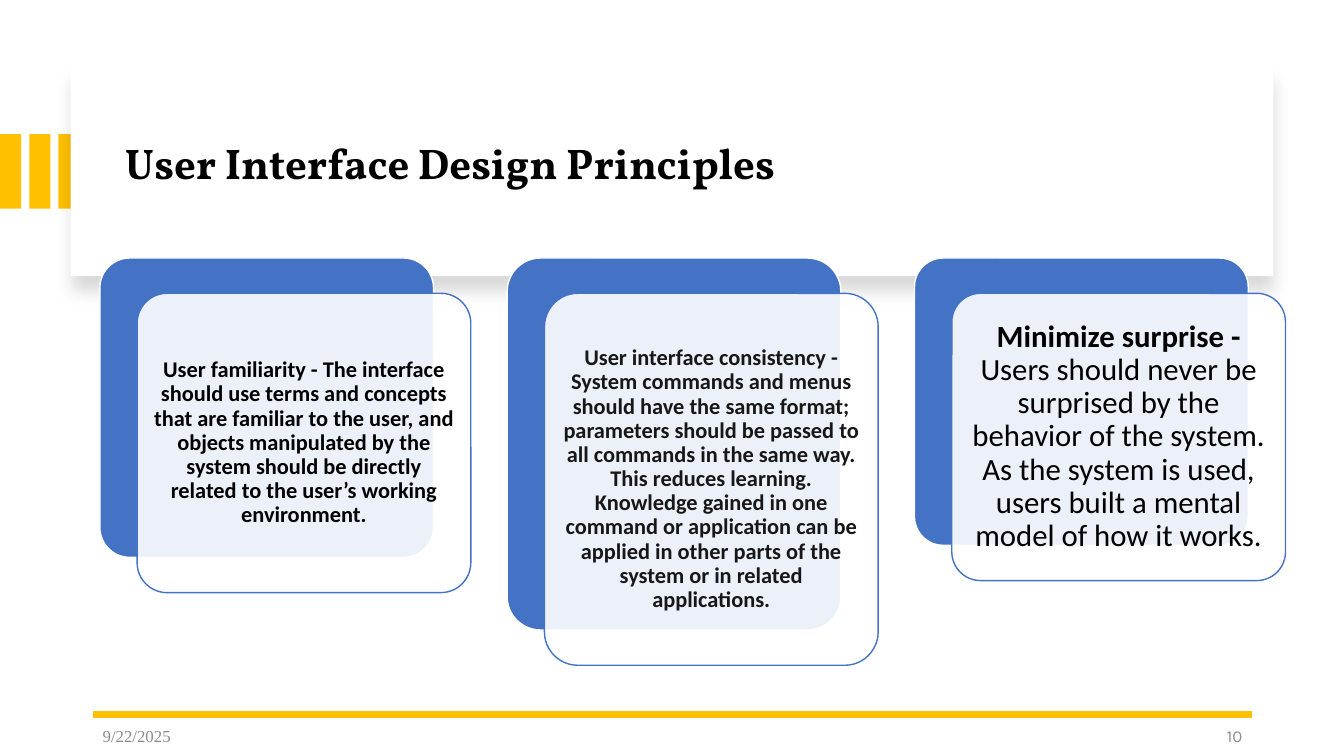
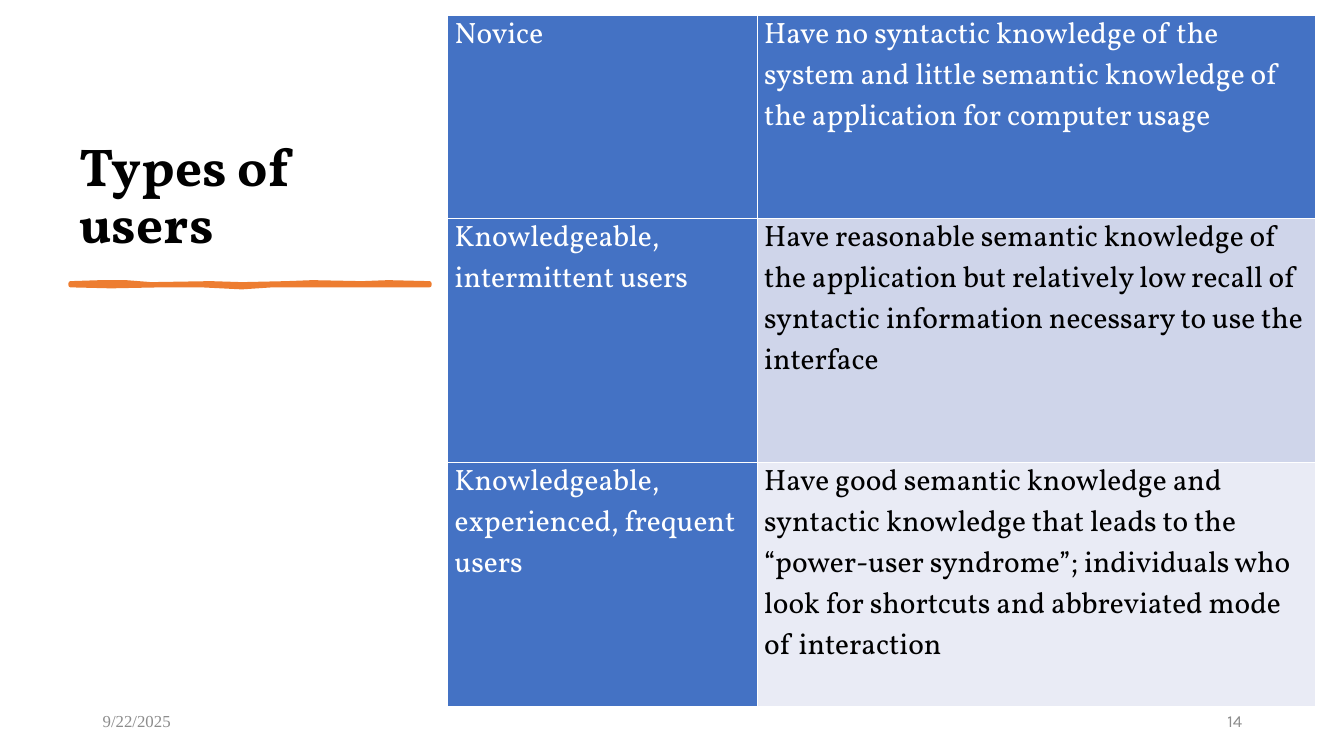
from dataclasses import dataclass

from lxml import etree
from pptx import Presentation
from pptx.dml.color import RGBColor
from pptx.enum.shapes import MSO_CONNECTOR as Connector, MSO_SHAPE as Shape
from pptx.enum.text import MSO_ANCHOR as Anchor, PP_ALIGN as Align
from pptx.oxml import parse_xml
from pptx.oxml.ns import nsdecls, qn
from pptx.util import Inches, Pt


@dataclass(frozen=True)
class Theme:
    black: str = "000000"
    white: str = "FFFFFF"
    soft_black: str = "181717"
    gray: str = "8C8C8C"
    gold: str = "FFC000"
    blue: str = "4472C4"
    orange: str = "ED7D31"
    band_dark: str = "CFD5EA"
    band_light: str = "E9EBF5"
    serif: str = "Vollkorn"
    sans: str = "Calibri"
    date_font: str = "Times New Roman"
    number_font: str = "Karla"
    banner_title: float = 30.6
    side_title: float = 38
    table_text: float = 21
    footer_text: float = 12


theme = Theme()


def write(frame, *runs, font, size, color, bold=False, align=Align.LEFT,
          anchor=Anchor.MIDDLE, spacing=1.0, inset=None):
    """Write one paragraph; a run is a text or a (text, bold) pair."""
    frame.word_wrap = True
    frame.vertical_anchor = anchor
    if inset is not None:
        frame.margin_left = frame.margin_right = Inches(inset)
        frame.margin_top = frame.margin_bottom = Inches(inset)
    para = frame.paragraphs[0]
    para.alignment = align
    para.line_spacing = spacing
    for run in runs:
        text, run_bold = (run, bold) if isinstance(run, str) else run
        span = para.add_run()
        span.text = text
        span.font.name = font
        span.font.size = Pt(size)
        span.font.bold = run_bold
        span.font.color.rgb = RGBColor.from_string(color)


def paint(shape, fill, line=None, width=1):
    shape.shadow.inherit = False
    shape.fill.solid()
    shape.fill.fore_color.rgb = RGBColor.from_string(fill)
    if line:
        shape.line.color.rgb = RGBColor.from_string(line)
        shape.line.width = Pt(width)
    else:
        shape.line.fill.background()


deck = Presentation()
deck.slide_width, deck.slide_height = Inches(13.33), Inches(7.5)
principles, users = [deck.slides.add_slide(deck.slide_layouts[6]) for _ in range(2)]

# Design principles: stripes behind a raised banner
for i in range(3):
    stripe = principles.shapes.add_shape(
        Shape.RECTANGLE, Inches(0.29 * i), Inches(1.33), Inches(0.21), Inches(0.74))
    paint(stripe, theme.gold)

banner = principles.shapes.add_shape(
    Shape.RECTANGLE, Inches(0.7), Inches(0.67), Inches(11.93), Inches(2.07))
paint(banner, theme.white)
effects = banner.element.spPr.find(qn("a:effectLst"))
effects.append(parse_xml(
    f'<a:outerShdw {nsdecls("a")} blurRad="{Pt(11)}" dist="{Pt(10)}" dir="5400000" '
    'algn="t" rotWithShape="0"><a:srgbClr val="000000"><a:alpha val="15000"/>'
    '</a:srgbClr></a:outerShdw>'))

rule = principles.shapes.add_connector(
    Connector.STRAIGHT, Inches(12.42), Inches(7.09), Inches(0.92), Inches(7.09))
rule.line.color.rgb = RGBColor.from_string(theme.gold)
rule.line.width = Pt(4.5)
etree.SubElement(rule.element.spPr, qn("a:effectLst"))

# Titles and footers of both pages
for page, title, place, size, anchor, footer_top, number in (
    (principles, "User Interface Design Principles", (1.14, 1.2, 11.13, 0.88),
     theme.banner_title, Anchor.MIDDLE, 7.1, "10"),
    (users, "Types of users", (0.69, 0.7, 3.75, 1.88),
     theme.side_title, Anchor.BOTTOM, 6.95, "14"),
):
    box = page.shapes.add_textbox(*map(Inches, place))
    write(box.text_frame, title, font=theme.serif, size=size, color=theme.black,
          bold=True, anchor=anchor, spacing=0.9)
    for left, text, font, align in (
        (0.92, "9/22/2025", theme.date_font, Align.LEFT),
        (9.42, number, theme.number_font, Align.RIGHT),
    ):
        box = page.shapes.add_textbox(
            Inches(left), Inches(footer_top), Inches(3), Inches(0.4))
        write(box.text_frame, text, font=font, size=theme.footer_text,
              color=theme.gray, align=align)

# Three cards, each a blue plate under a translucent text panel
cards = (
    (2.97, 16, theme.black, 0.07, [
        ("User familiarity - The interface should use terms and concepts that are "
         "familiar to the user, and objects manipulated by the system should be "
         "directly related to the user’s working environment.", True)]),
    (3.69, 16, theme.soft_black, 0.07, [
        ("User interface consistency - System commands and menus should have the "
         "same format; parameters should be passed to all commands in the same way. "
         "This reduces learning. Knowledge gained in one command or application can "
         "be applied in other parts of the system or in related applications.", True)]),
    (2.85, 22, theme.black, 0.09, [
        ("Minimize surprise - ", True),
        ("Users should never be surprised by the behavior of the system. As the "
         "system is used, users built a mental model of how it works.", False)]),
)
for i, (height, size, color, inset, runs) in enumerate(cards):
    left = 0.99 + 4.04 * i
    plate, panel = [
        principles.shapes.add_shape(Shape.ROUNDED_RECTANGLE, Inches(x), Inches(y),
                                    Inches(3.31), Inches(height))
        for x, y in ((left, 2.56), (left + 0.37, 2.91))]
    plate.adjustments[0] = panel.adjustments[0] = 0.1
    paint(plate, theme.blue, theme.white)
    paint(panel, theme.white, theme.blue)
    panel_color = panel.element.spPr.find(qn("a:solidFill"))[0]
    etree.SubElement(panel_color, qn("a:alpha"), val="90000")
    write(panel.text_frame, *runs, font=theme.sans, size=size, color=color,
          align=Align.CENTER, spacing=0.9, inset=inset)

# Types of users: hand-drawn underline
stroke_outline = [
    (0.7, 2.81), (1.0, 2.8), (1.25, 2.8), (1.5, 2.82), (2.09, 2.81), (2.4, 2.82),
    (2.84, 2.81), (3.1, 2.8), (3.59, 2.81), (3.85, 2.8), (4.26, 2.81),
    (4.26, 2.83), (3.9, 2.83), (3.5, 2.83), (3.1, 2.83), (2.7, 2.83), (2.4, 2.85),
    (2.0, 2.83), (1.6, 2.83), (1.1, 2.84), (0.7, 2.83)]
points = [(Inches(x), Inches(y)) for x, y in stroke_outline]
builder = users.shapes.build_freeform(*points[0])
builder.add_line_segments(points[1:], close=True)
paint(builder.convert_to_shape(), theme.orange, theme.orange, 3)

# Table of user types
user_types = (
    (2.02, theme.blue, theme.white, "Novice",
     "Have no syntactic knowledge of the system and little semantic knowledge of "
     "the application for computer usage"),
    (2.42, theme.band_dark, theme.black, "Knowledgeable, intermittent users",
     "Have reasonable semantic knowledge of the application but relatively low "
     "recall of syntactic information necessary to use the interface"),
    (2.42, theme.band_light, theme.black, "Knowledgeable, experienced, frequent users",
     "Have good semantic knowledge and syntactic knowledge that leads to the "
     "“power-user syndrome”; individuals who look for shortcuts and abbreviated "
     "mode of interaction"),
)
table = users.shapes.add_table(
    len(user_types), 2, Inches(4.44), Inches(0.15), Inches(8.61), Inches(6.86)).table
table.first_row = table.horz_banding = False
for column, width in zip(table.columns, (3.07, 5.54)):
    column.width = Inches(width)
for row, (height, band, ink, kind, description) in zip(table.rows, user_types):
    row.height = Inches(height)
    for cell, text, fill, color in zip(
            row.cells, (kind, description), (theme.blue, band), (theme.white, ink)):
        cell.margin_left = cell.margin_right = Inches(0.07)
        cell.margin_top = cell.margin_bottom = 0
        write(cell.text_frame, text, font=theme.serif, size=theme.table_text,
              color=color, anchor=Anchor.TOP)
        for side in "LRTB":
            cell._tc.get_or_add_tcPr().append(parse_xml(
                f'<a:ln{side} {nsdecls("a")} w="{Pt(1)}"><a:solidFill>'
                f'<a:srgbClr val="{theme.white}"/></a:solidFill></a:ln{side}>'))
        cell.fill.solid()
        cell.fill.fore_color.rgb = RGBColor.from_string(fill)

deck.save("out.pptx")
